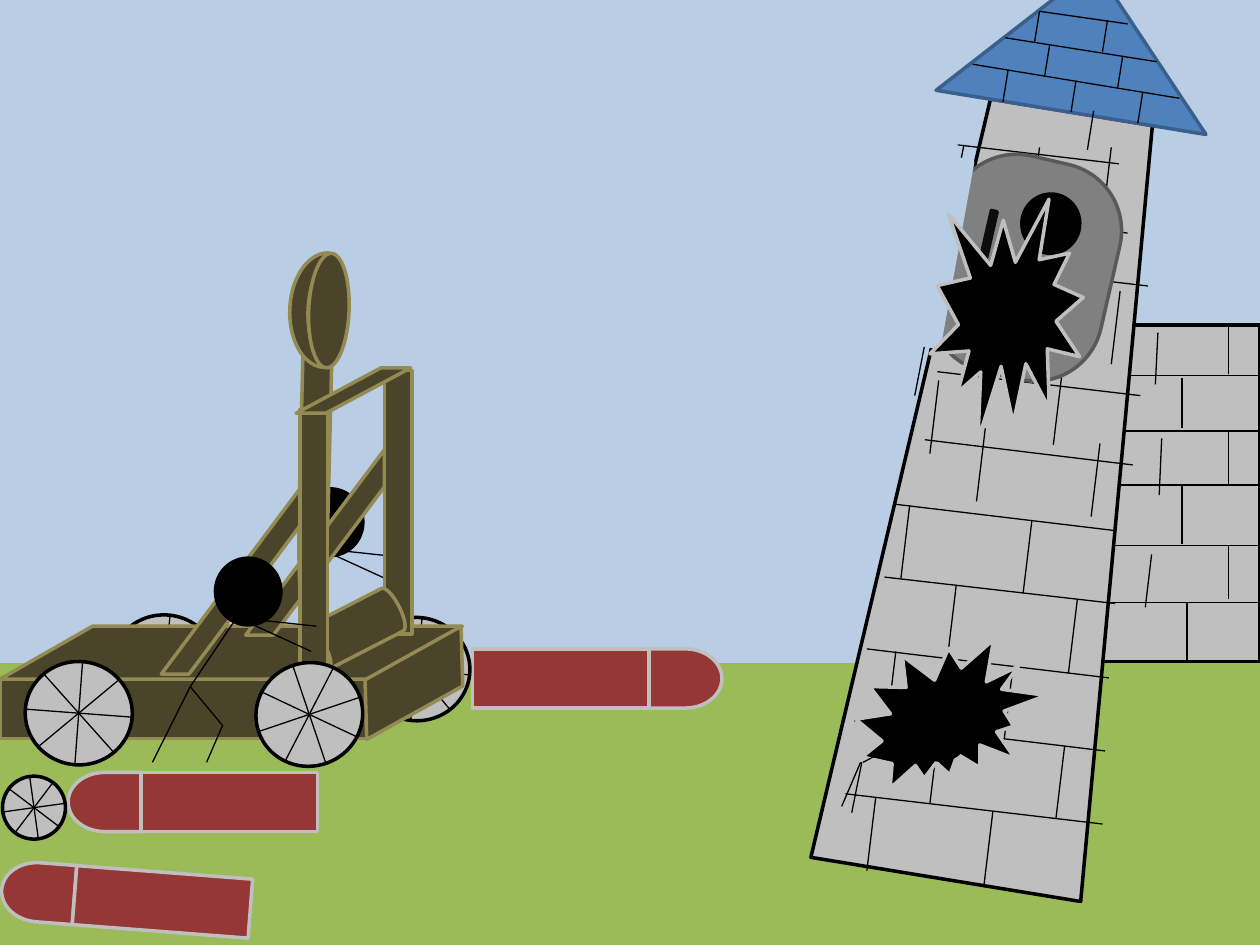
"""Draw a catapult attacking a crumbling stone tower."""
import math

from lxml import etree
from pptx import Presentation
from pptx import util as u
from pptx.dml import color
from pptx.enum import shapes
from pptx.oxml import ns

KIND = shapes.MSO_SHAPE
COLORS = {
    "grass": "9BBB59", "sky": "B9CDE5", "stone": "BFBFBF", "black": "000000",
    "shell": "953735", "wood": "4A452A", "grain": "948A54", "roof": "4F81BD",
    "eave": "3A5F8C", "gate": "808080", "arch": "595959", "slot": "0D0D0D",
}


def rgb(name):
    """Look up a named colour."""
    return color.RGBColor.from_string(COLORS[name])


def part(slide, kind, box, fill, edge, rotation=0, adjust=None):
    """Add a filled, outlined shape at a box in inches."""
    piece = slide.shapes.add_shape(kind, *map(u.Inches, box))
    piece.fill.solid()
    settings = (
        (piece, {"rotation": rotation}),
        (piece.shadow, {"inherit": False}),
        (piece.fill.fore_color, {"rgb": rgb(fill)}),
        (piece.line.color, {"rgb": rgb(edge)}),
        (piece.line, {"width": u.Pt(2)}),
    )
    for target, values in settings:
        for name, value in values.items():
            setattr(target, name, value)
    if adjust is not None:
        piece.adjustments[0] = adjust


def strokes(slide, left, top, segments):
    """Add thin black lines given as x1, y1, x2, y2 from a corner."""
    for x1, y1, x2, y2 in segments:
        ends = (left + x1, top + y1, left + x2, top + y2)
        stroke = slide.shapes.add_connector(
            shapes.MSO_CONNECTOR.STRAIGHT, *map(u.Inches, ends))
        stroke.line.color.rgb = rgb("black")
        stroke.line.width = u.Pt(0.75)
        etree.SubElement(stroke._element.spPr, ns.qn("a:effectLst"))


def joints(starts, dx, dy):
    """Turn start points into parallel segments."""
    return [(x, y, x + dx, y + dy) for x, y in starts]


def wheel(slide, left, top, width=0.85, height=0.82, rotation=0):
    """Draw a wheel with four evenly spaced diameters."""
    part(slide, KIND.OVAL, (left, top, width, height), "stone", "black", rotation)
    turn = math.radians(rotation)
    spokes = []
    for step in range(4):
        angle = step * math.pi / 4
        along, across = width / 2 * math.cos(angle), height / 2 * math.sin(angle)
        dx = along * math.cos(turn) - across * math.sin(turn)
        dy = along * math.sin(turn) + across * math.cos(turn)
        spokes.append((-dx, -dy, dx, dy))
    strokes(slide, left + width / 2, top + height / 2, spokes)


def shell(slide, left, top, rotation=0):
    """Draw a shell whose nose points along the rotation."""
    length, height, nose = 1.98, 0.47, 0.58
    turn = math.radians(rotation)
    pieces = ((KIND.FLOWCHART_DELAY, nose, (length - nose) / 2),
              (KIND.RECTANGLE, length - nose, -nose / 2))
    for kind, width, offset in pieces:
        x = left + length / 2 + offset * math.cos(turn) - width / 2
        y = top + offset * math.sin(turn)
        part(slide, kind, (x, y, width, height), "shell", "stone", rotation)


def soldier(slide, left, top):
    """Draw a leaning stick figure from its head's corner."""
    strokes(slide, left, top, [
        (-0.2, 1.02, -0.5, 1.62), (-0.2, 1.02, 0.05, 1.32),
        (0.06, 1.32, -0.07, 1.62), (-0.2, 1.02, 0.17, 0.47),
        (0.17, 0.47, 0.76, 0.74), (0.15, 0.47, 0.8, 0.54)])
    part(slide, KIND.OVAL, (left, top, 0.52, 0.53), "black", "black")


def upright(slide, left, top):
    """Draw a post with its diagonal brace."""
    part(slide, KIND.DIAGONAL_STRIPE, (left - 1.1, top + 0.63, 1.1, 1.47),
         "wood", "grain", 180, 0.8)
    part(slide, KIND.FLOWCHART_PROCESS, (left, top, 0.22, 2.09), "wood", "grain")


def catapult(slide, left, top):
    """Draw the catapult and its crew from back to front."""
    def timber(kind, x, y, width, height, rotation=0, adjust=None):
        """Place one wooden part."""
        part(slide, kind, (left + x, top + y, width, height),
             "wood", "grain", rotation, adjust)

    soldier(slide, left + 2.36, top + 1.88)
    for x, y in ((2.88, 2.9), (0.88, 2.88)):
        wheel(slide, left + x, top + y, rotation=186.4)
    timber(KIND.FLOWCHART_PROCESS, 0, 3.39, 2.92, 0.47)
    timber(KIND.FLOWCHART_DATA, 0, 2.97, 3.67, 0.42)
    timber(KIND.FLOWCHART_DATA, 2.74, 3.21, 1.09, 0.42, 150.9)
    upright(slide, left + 3.05, top + 0.94)
    wheel(slide, left + 0.2, top + 3.25, rotation=184.3)
    timber(KIND.FLOWCHART_DELAY, 1.32, 1.88, 2.34, 0.23, 91.4)
    timber(KIND.MOON, 2.3, 0, 0.29, 0.91, 2.5)
    timber(KIND.OVAL, 2.45, 0.01, 0.32, 0.91, 2.5)
    timber(KIND.CAN, 2.63, 2.6, 0.38, 0.78, 242.8, 0.31)
    upright(slide, left + 2.38, top + 1.25)
    wheel(slide, left + 2.03, top + 3.26, rotation=161.3)
    soldier(slide, left + 1.71, top + 2.43)
    timber(KIND.PARALLELOGRAM, 2.35, 0.92, 0.91, 0.36, 0, 1.87)


def wall(slide, left, top, width, height):
    """Draw the low wall with its courses and joints."""
    part(slide, KIND.FLOWCHART_PROCESS, (left, top, width, height), "stone", "black")
    courses = ((0.65, 0.4), (0.65, 0.84), (0.7, 1.27), (0.7, 1.75), (0.79, 2.2))
    strokes(slide, left, top, [(x, y, width, y) for x, y in courses])
    strokes(slide, left, top, [
        (1.42, 2.2, 1.42, 2.67), (1.75, 1.75, 1.75, 2.17),
        (1.38, 1.27, 1.38, 1.74), (1.75, 0.84, 1.75, 1.28),
        (1.38, 0.42, 1.38, 0.82), (1.75, 0, 1.75, 0.39)])


def tower(slide, left, top):
    """Draw the leaning tower, its roof, stones and breaches."""
    def block(kind, x, y, width, height, fill, edge, rotation=0, adjust=None):
        """Place one tower part."""
        part(slide, kind, (left + x, top + y, width, height),
             fill, edge, rotation, adjust)

    block(KIND.FLOWCHART_MANUAL_OPERATION, 0.92, 0.85, 2.17, 6.17,
          "stone", "black", 189.3)
    block(KIND.FLOWCHART_EXTRACT, 1.51, -0.27, 2.17, 1.17, "roof", "eave", 9.3)
    tile_rows = [(1.72, 0.51, 3.36, 0.78), (1.98, 0.3, 3.18, 0.49),
                 (2.25, 0.09, 2.95, 0.19)]
    tile_starts = [(2, 0.56), (2.54, 0.64), (3.07, 0.73), (2.33, 0.36),
                   (2.91, 0.45), (2.25, 0.09), (2.79, 0.16)]
    strokes(slide, left, top, tile_rows + joints(tile_starts, -0.04, 0.25))
    strokes(slide, left, top, [
        (0.71, 6.3, 2.75, 6.54), (0.78, 5.72, 2.77, 5.96),
        (0.88, 5.15, 2.8, 5.38), (1.02, 4.58, 2.85, 4.79),
        (1.09, 4, 2.84, 4.21), (1.34, 3.49, 2.99, 3.69),
        (1.6, 1.15, 2.88, 1.3)])
    block(KIND.RECTANGLE, 1.13, 1.13, 0.33, 2, "sky", "sky", 10.9)
    strokes(slide, left, top, [
        (1.26, 3.14, 1.65, 1.15), (1.44, 2.95, 3.05, 3.14),
        (1.57, 2.09, 3.11, 2.27), (1.66, 1.69, 2.95, 1.85),
        (2.68, 0.88, 2.63, 1.19)])
    stone_starts = [
        (0.95, 6.33), (1.88, 6.44), (2.45, 5.92), (2.04, 5.29), (2.55, 4.76),
        (2.19, 4.13), (2.73, 3.52), (2.43, 2.95), (2.89, 2.31), (2.46, 1.81),
        (2.82, 1.17), (1.45, 5.8), (1.11, 5.17), (1.59, 4.64), (1.22, 4.01),
        (1.82, 3.4), (1.45, 3.02), (2.25, 1.17)]
    strokes(slide, left, top, joints(stone_starts, -0.07, 0.58))
    block(KIND.ROUNDED_RECTANGLE, 1.45, 1.25, 1.38, 1.75, "gate", "arch", 12.9, 0.39)
    block(KIND.MATH_PLUS, 1.65, 1.51, 0.29, 1.17, "slot", "slot", 12.9, 0.16)
    strokes(slide, left, top, [
        (3.14, 4.4, 3.09, 4.82), (3.22, 3.48, 3.2, 3.93),
        (3.19, 2.64, 3.17, 3.05)])
    block(KIND.FLOWCHART_CONNECTOR, 2.11, 1.54, 0.46, 0.47, "black", "black", 6.8)
    block(KIND.RECTANGLE, 1.12, 1.23, 0.47, 1.5, "sky", "sky", 10.3)
    block(KIND.EXPLOSION2, 0.8, 5.04, 1.48, 1.27, "black", "stone", 6.8)
    block(KIND.OVAL, 1.19, 5.54, 0.52, 0.47, "black", "black", 70.4)
    strokes(slide, left, top, [
        (1.23, 5.85, 0.85, 6.05), (0.83, 6.05, 0.68, 6.4),
        (0.84, 6.05, 0.76, 6.45)])
    block(KIND.EXPLOSION1, 1.41, 1.55, 1.19, 1.97, "black", "stone", 6.8)


def main():
    """Build the scene and save it."""
    deck = Presentation()
    deck.slide_width, deck.slide_height = u.Inches(10), u.Inches(7.5)
    slide = deck.slides.add_slide(deck.slide_layouts[6])
    part(slide, KIND.RECTANGLE, (0, 5.25, 10, 2.25), "grass", "grass")
    part(slide, KIND.RECTANGLE, (0, 0, 10, 5.25), "sky", "sky")
    wall(slide, 8, 2.58, 2, 2.67)
    shell(slide, 0.54, 6.13, 180)
    wheel(slide, 0.02, 6.16, 0.5, 0.5, 352.1)
    shell(slide, 0.01, 6.9, 184.4)
    shell(slide, 3.75, 5.15)
    catapult(slide, 0, 2)
    tower(slide, 6, 0)
    deck.save("out.pptx")


if __name__ == "__main__":
    main()
